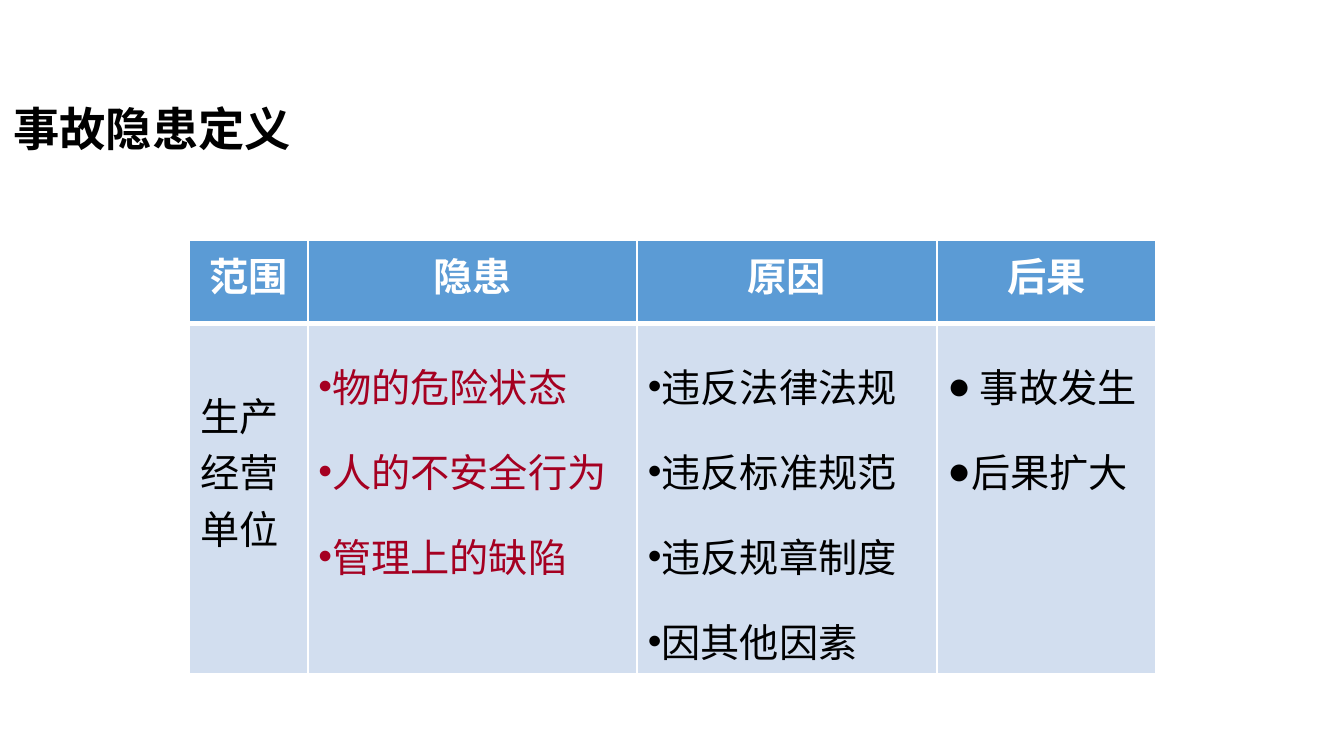
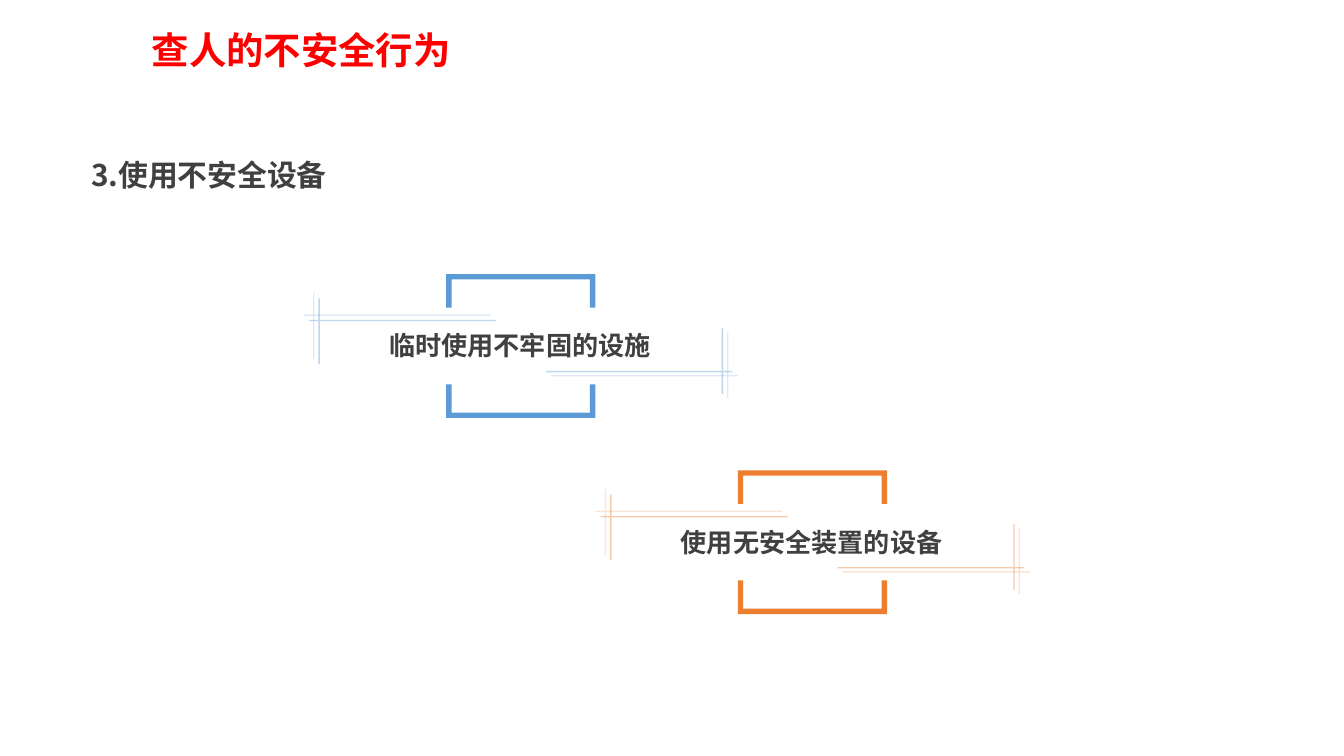
from lxml import etree
from pptx import Presentation
from pptx.dml.color import RGBColor
from pptx.enum.text import MSO_ANCHOR, PP_ALIGN
from pptx.oxml.ns import qn
from pptx.util import Inches, Pt

CENTER, LEFT = PP_ALIGN.CENTER, PP_ALIGN.LEFT
TOP, MIDDLE = MSO_ANCHOR.TOP, MSO_ANCHOR.MIDDLE

COLORS = {
    "black": "000000", "white": "FFFFFF", "grey": "404040", "red": "FF0000",
    "crimson": "A50021", "blue": "5B9BD5", "pale_blue": "D2DEEF", "orange": "ED7D31",
}
CJK_FONT, TITLE_FONT, BULLET_FONT = "Noto Sans CJK SC", "Calibri", "Arial"

# Content: slide 1
DEFINITION_TITLE = "事故隐患定义"
# heading, column width, bullet, text colour, entries
HAZARD_COLUMNS = [
    ("范围", 0.88, None, "black", ["生产经营单位"]),
    ("隐患", 2.45, "•", "crimson", ["物的危险状态", "人的不安全行为", "管理上的缺陷"]),
    ("原因", 2.23, "•", "black", ["违反法律法规", "违反标准规范", "违反规章制度", "因其他因素"]),
    ("后果", 1.63, "●", "black", [" 事故发生", "后果扩大"]),
]
TABLE_LEFT, TABLE_TOP = 1.41, 1.79
ROW_HEIGHTS = (0.62, 2.6)
TABLE_SIZE = 21
SCOPE_DROP = 0.46  # the scope text starts one line lower

# Content: slide 2
BEHAVIOUR_TITLE = "查人的不安全行为"
EQUIPMENT_HEADING = "3.使用不安全设备"
# text, colour, left and top of the bracket frame
UNSAFE_USES = [
    ("临时使用不牢固的设施", "blue", 3.32, 2.04),
    ("使用无安全装置的设备", "orange", 5.49, 3.5),
]

# Bracket frame and crossed hairlines, in inches
FRAME_W, FRAME_H, FRAME_BAR, FRAME_ARM = 1.11, 1.07, 0.04, 0.25
CROSS_W, CROSS_H, HAIR = 1.39, 0.49, 0.01
CROSS_X, CROSS_Y = 0.07, 0.16
# offset from the frame, turned half round, opacity in percent
CROSSES = [
    (-1.02, 0.18, False, 40), (-1.06, 0.14, False, 20),
    (0.74, 0.4, True, 40), (0.78, 0.43, True, 20),
]
LABEL_DX, LABEL_DY, LABEL_W, LABEL_H = -0.94, 0.39, 2.98, 0.28


def rgb(name):
    return RGBColor.from_string(COLORS[name])


def style_paragraph(paragraph, size, color, bold=False, font=CJK_FONT, align=LEFT):
    paragraph.alignment = align
    for run in paragraph.runs:
        run.font.size, run.font.bold = Pt(size), bold
        run.font.name = font
        run.font.color.rgb = rgb(color)
        east_asian = etree.SubElement(run.font._element, qn("a:ea"))
        east_asian.set("typeface", CJK_FONT)


def add_text(shapes, text, left, top, width, height, size, color,
             font=CJK_FONT, align=LEFT, anchor=TOP, spacing=None):
    box = shapes.add_textbox(Inches(left), Inches(top), Inches(width), Inches(height))
    frame = box.text_frame
    frame.word_wrap = True
    frame.vertical_anchor = anchor
    frame.text = text
    frame.paragraphs[0].line_spacing = spacing
    style_paragraph(frame.paragraphs[0], size, color, True, font, align)


def set_borders(cell, widths):
    properties = cell._tc.get_or_add_tcPr()
    for side, width in zip(("lnL", "lnR", "lnT", "lnB"), widths):
        line = etree.SubElement(properties, qn("a:" + side), w=str(Pt(width)))
        fill = etree.SubElement(line, qn("a:solidFill"))
        etree.SubElement(fill, qn("a:srgbClr"), val=COLORS["white"])


def fill_cell(cell, lines, fill, color, bold=False, align=LEFT, bullet=None,
              borders=(1, 1, 1, 1), margin_top=0.04):
    set_borders(cell, borders)
    cell.fill.solid()
    cell.fill.fore_color.rgb = rgb(fill)
    cell.margin_left = cell.margin_right = Inches(0.08)
    cell.margin_top, cell.margin_bottom = Inches(margin_top), Inches(0.04)
    cell.text_frame.text = "\n".join(lines)
    for paragraph in cell.text_frame.paragraphs:
        if bullet:
            paragraph.line_spacing = 1.5
            properties = paragraph._p.get_or_add_pPr()
            etree.SubElement(properties, qn("a:buFont"), typeface=BULLET_FONT)
            etree.SubElement(properties, qn("a:buChar"), char=bullet)
        style_paragraph(paragraph, TABLE_SIZE, color, bold, align=align)


def add_hazard_table(slide):
    widths = [column[1] for column in HAZARD_COLUMNS]
    table = slide.shapes.add_table(
        2, len(widths), Inches(TABLE_LEFT), Inches(TABLE_TOP),
        Inches(sum(widths)), Inches(sum(ROW_HEIGHTS))).table
    for row, height in zip(table.rows, ROW_HEIGHTS):
        row.height = Inches(height)
    for i, (heading, width, bullet, color, entries) in enumerate(HAZARD_COLUMNS):
        table.columns[i].width = Inches(width)
        fill_cell(table.cell(0, i), [heading], "blue", "white", True, CENTER,
                  borders=(1, 1, 1, 3))
        fill_cell(table.cell(1, i), entries, "pale_blue", color, bullet=bullet,
                  borders=(1, 1, 3, 1), margin_top=0.04 if bullet else SCOPE_DROP)


def turned(points, width, height):
    return [(width - x, height - y) for x, y in points]


def add_outline(shapes, contours, left, top, color, opacity=100):
    placed = [[(Inches(left + x), Inches(top + y)) for x, y in points]
              for points in contours]
    builder = shapes.build_freeform(*placed[0][0])
    for i, points in enumerate(placed):
        if i:
            builder.move_to(*points[0])
        builder.add_line_segments(points[1:], close=True)
    outline = builder.convert_to_shape()
    outline.shadow.inherit = False
    outline.line.fill.background()
    outline.fill.solid()
    outline.fill.fore_color.rgb = rgb(color)
    if opacity < 100:
        tint = outline._element.spPr.find(qn("a:solidFill")).find(qn("a:srgbClr"))
        etree.SubElement(tint, qn("a:alpha"), val=str(opacity * 1000))


def frame_contours():
    inner = FRAME_W - FRAME_BAR
    upper = [(0, 0), (FRAME_W, 0), (FRAME_W, FRAME_ARM), (inner, FRAME_ARM),
             (inner, FRAME_BAR), (FRAME_BAR, FRAME_BAR),
             (FRAME_BAR, FRAME_ARM), (0, FRAME_ARM)]
    return [turned(upper, FRAME_W, FRAME_H), upper]


def cross_points():
    x1, x2 = CROSS_X, CROSS_X + HAIR
    y1, y2 = CROSS_Y, CROSS_Y + HAIR
    return [(x1, 0), (x2, 0), (x2, y1), (CROSS_W, y1), (CROSS_W, y2), (x2, y2),
            (x2, CROSS_H), (x1, CROSS_H), (x1, y2), (0, y2), (0, y1), (x1, y1)]


def add_unsafe_use(slide, text, color, left, top):
    shapes = slide.shapes.add_group_shape().shapes
    add_outline(shapes, frame_contours(), left, top, color)
    for dx, dy, is_turned, opacity in CROSSES:
        points = cross_points()
        if is_turned:
            points = turned(points, CROSS_W, CROSS_H)
        add_outline(shapes, [points], left + dx, top + dy, color, opacity)
    add_text(shapes, text, left + LABEL_DX, top + LABEL_DY, LABEL_W, LABEL_H,
             14, "grey", align=CENTER, anchor=MIDDLE)


def main():
    deck = Presentation()
    deck.slide_width = Inches(10)
    deck.slide_height = deck.slide_width * 9 // 16
    blank = deck.slide_layouts[6]

    # Slide 1: definition table
    definition = deck.slides.add_slide(blank)
    add_text(definition.shapes, DEFINITION_TITLE, 0, 0.75, 2.38, 0.46, 24.8, "black",
             font=TITLE_FONT, anchor=MIDDLE, spacing=0.9)
    add_hazard_table(definition)

    # Slide 2: unsafe equipment
    behaviour = deck.slides.add_slide(blank)
    add_text(behaviour.shapes, EQUIPMENT_HEADING, 0.58, 1.12, 3.78, 0.37, 16, "grey")
    for unsafe_use in UNSAFE_USES:
        add_unsafe_use(behaviour, *unsafe_use)
    add_text(behaviour.shapes, BEHAVIOUR_TITLE, 1.03, 0.15, 4.41, 0.44, 20, "red")

    deck.save("out.pptx")


if __name__ == "__main__":
    main()
